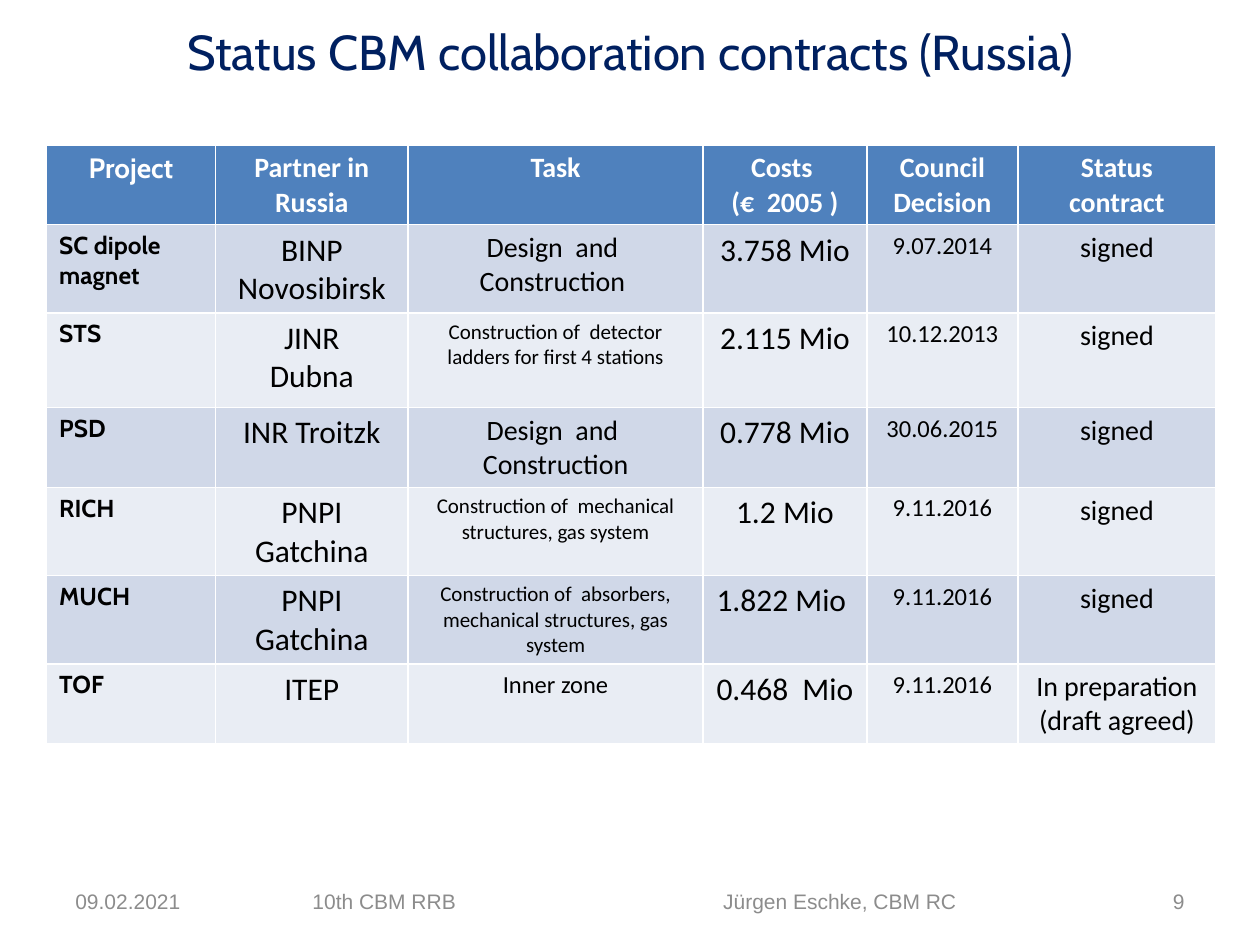
from pptx import Presentation
from pptx.dml.color import RGBColor
from pptx.enum.text import MSO_ANCHOR, MSO_AUTO_SIZE, PP_ALIGN
from pptx.oxml import parse_xml
from pptx.oxml.ns import nsdecls
from pptx.util import Inches, Pt

LEFT, CENTER, RIGHT = PP_ALIGN.LEFT, PP_ALIGN.CENTER, PP_ALIGN.RIGHT
MIDDLE = MSO_ANCHOR.MIDDLE

COL_WIDTHS = [1.34, 1.53, 2.34, 1.3, 1.2, 1.57]
ROW_HEIGHTS = [0.63, 0.67, 0.75, 0.4, 0.59, 0.57, 0.38]
HEADER = ["Project", "Partner in Russia", "Task", "Costs \n(€  2005 )",
          "Council\nDecision", "Status contract"]
CONTRACTS = [
    ["SC dipole magnet", "BINP\nNovosibirsk", "Design  and \nConstruction ",
     "3.758 Mio", "9.07.2014", "signed"],
    ["STS", "JINR\nDubna", "Construction of  detector ladders for first 4 stations",
     "2.115 Mio", "10.12.2013", "signed"],
    ["PSD", "INR Troitzk", "Design  and \nConstruction",
     "0.778 Mio", "30.06.2015", "signed"],
    ["RICH", "PNPI Gatchina", "Construction of  mechanical structures, gas system",
     "1.2 Mio", "9.11.2016", "signed"],
    ["MUCH", "PNPI Gatchina",
     "Construction of  absorbers, mechanical structures, gas system",
     "1.822 Mio ", "9.11.2016", "signed"],
    ["TOF", "ITEP", "Inner zone",
     "0.468  Mio", "9.11.2016", "In preparation\n(draft agreed)"],
]
COL_SIZES = [14, 18, None, 18, 14, 16]
TASK_SIZES = [16, 12, 16, 12, 12, 14]


def rgb(value):
    return RGBColor.from_string(value)


class SlideBuilder:
    heading_font, body_font, footer_font = "Cabin", "Calibri", "Arial"
    title_color, footer_color = "002060", "8C8C8C"
    header_fill, bands = "4F81BD", ("D0D8E8", "E9EDF4")

    def __init__(self, prs):
        self.s = prs.slides.add_slide(prs.slide_layouts[5])

    def format(self, tf, size, font, color, align=LEFT, bold=False):
        for p in tf.paragraphs:
            p.alignment = align
            for r in p.runs:
                r.font.size = Pt(size)
                r.font.name = font
                r.font.bold = bold
                r.font.color.rgb = rgb(color)

    def title(self, text, x, y, w, h):
        sp = self.s.shapes.title
        sp.left, sp.top, sp.width, sp.height = map(Inches, (x, y, w, h))
        tf = sp.text_frame
        tf.text = text
        tf.auto_size = MSO_AUTO_SIZE.SHAPE_TO_FIT_TEXT
        self.format(tf, 28, self.heading_font, self.title_color, CENTER)

    def footer(self, text, x, w, align=LEFT, inset=0.1, tab=None):
        """Add a footer box; tab is a tab stop in inches from the text edge."""
        tf = self.s.shapes.add_textbox(
            Inches(x), Inches(6.95), Inches(w), Inches(0.4)).text_frame
        tf.word_wrap = True
        tf.vertical_anchor = MIDDLE
        tf.margin_left = Inches(inset)
        tf.text = text
        if tab:
            pPr = tf.paragraphs[0]._p.get_or_add_pPr()
            pPr.append(parse_xml(
                f'<a:tabLst {nsdecls("a")}><a:tab pos="{Inches(tab)}" algn="l"/></a:tabLst>'))
        self.format(tf, 12, self.footer_font, self.footer_color, align)

    def cell(self, cell, text, fill, *style):
        cell.fill.solid()
        cell.fill.fore_color.rgb = rgb(fill)
        cell.text_frame.text = text
        self.format(cell.text_frame, *style)

    def table(self, x, y):
        table = self.s.shapes.add_table(
            len(ROW_HEIGHTS), len(COL_WIDTHS), Inches(x), Inches(y),
            Inches(sum(COL_WIDTHS)), Inches(sum(ROW_HEIGHTS))).table
        for column, width in zip(table.columns, COL_WIDTHS):
            column.width = Inches(width)
        for row, height in zip(table.rows, ROW_HEIGHTS):
            row.height = Inches(height)
        for j, text in enumerate(HEADER):
            font = self.body_font if j else self.heading_font
            self.cell(table.cell(0, j), text, self.header_fill,
                      16, font, "FFFFFF", CENTER, True)
        for i, contract in enumerate(CONTRACTS):
            for j, text in enumerate(contract):
                size = COL_SIZES[j] or TASK_SIZES[i]
                style = ((self.body_font, "000000", CENTER, False) if j
                         else (self.heading_font, "000000", LEFT, True))
                self.cell(table.cell(i + 1, j), text, self.bands[i % 2], size, *style)


def main():
    prs = Presentation()
    prs.slide_width, prs.slide_height = Inches(10), Inches(7.5)
    slide = SlideBuilder(prs)
    slide.table(0.37, 1.15)
    slide.title("Status CBM collaboration contracts (Russia)", 0, 0.12, 10, 0.57)
    slide.footer("09.02.2021", 0.5, 2.33)
    slide.footer("10th CBM RRB\tJürgen Eschke, CBM RC", 2.17, 5.75, inset=0.31, tab=3.26)
    slide.footer("9", 7.17, 2.33, RIGHT)
    prs.save("out.pptx")


if __name__ == "__main__":
    main()
